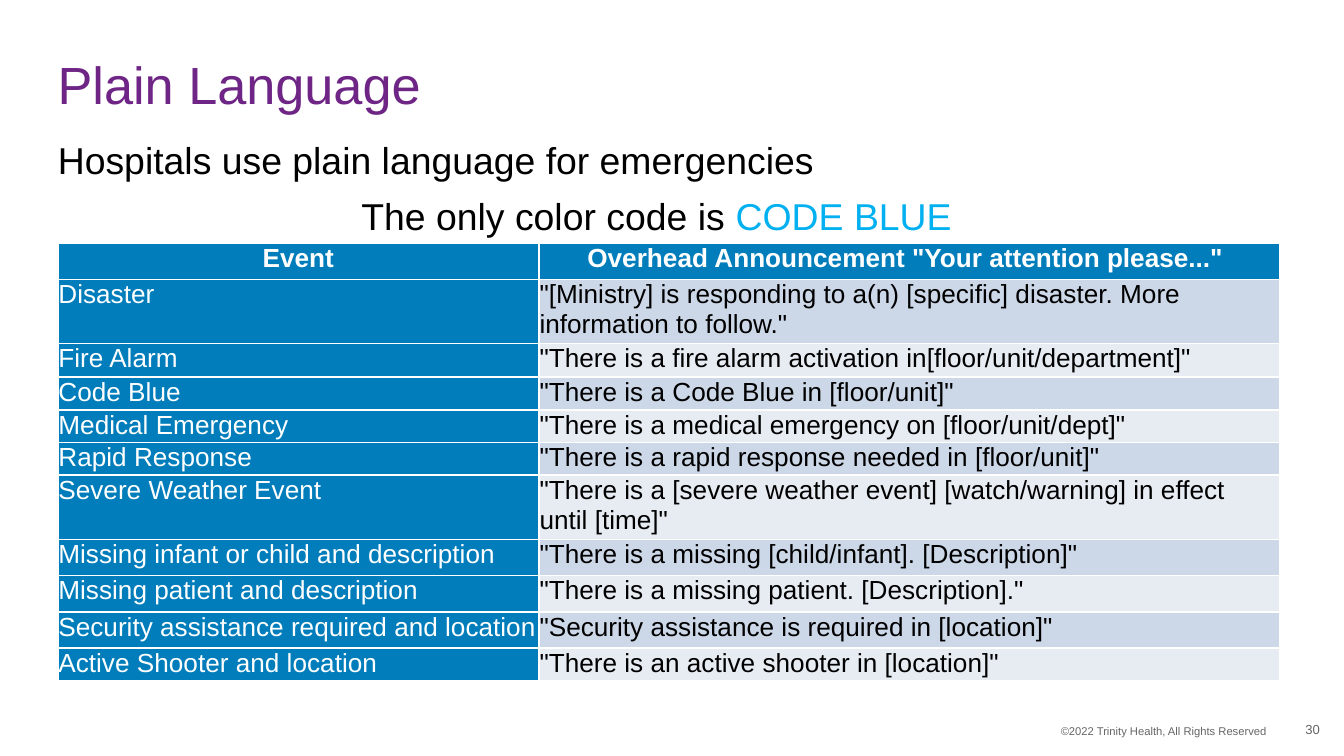
import pptx
import pptx.dml.color
import pptx.enum.text
import pptx.util
from dataclasses import dataclass
from pptx.util import Inches, Pt

ALIGN = pptx.enum.text.PP_ALIGN
ANCHOR = pptx.enum.text.MSO_ANCHOR
COLORS = {
    "purple": "6E2585", "black": "000000", "cyan": "00B0F0", "gray": "666666",
    "white": "FFFFFF", "blue": "007DBA", "dark": "CCD7E7", "light": "E7ECF3",
}


@dataclass
class Label:
    text: str
    place: tuple[float, float, float, float]
    size: int
    color: str
    align: ALIGN = ALIGN.LEFT
    anchor: ANCHOR = ANCHOR.TOP
    insets: tuple[float, float, float, float] = (0.1, 0.05, 0.1, 0.05)
    spacing: float = 1.0


@dataclass
class Event:
    name: str
    call: str
    height: float = 0.24


TITLE = Label("Plain Language", (0.43, 0.38, 9, 0.55), 28, "purple",
              anchor=ANCHOR.MIDDLE, insets=(0, 0, 0, 0), spacing=0.9)
INTRO = Label("Hospitals use plain language for emergencies",
              (0.43, 0.92, 9.01, 4.11), 20, "black", insets=(0, 0.1, 0.1, 0.05))
RIGHTS = Label("©2022 Trinity Health, All Rights Reserved",
               (5.33, 5.34, 4.19, 0.2), 6, "gray", ALIGN.RIGHT)
NUMBER = Label("30", (9.38, 5.28, 0.44, 0.3), 7, "gray", ALIGN.RIGHT,
               ANCHOR.MIDDLE, (0.1, 0.05, 0, 0.05))

EVENTS = [
    Event("Event", 'Overhead Announcement "Your attention please..." ', 0.27),
    Event("Disaster", '"[Ministry] is responding to a(n) [specific] disaster. '
          'More information to follow."', 0.43),
    Event("Fire Alarm",
          '"There is a fire alarm activation in[floor/unit/department]"', 0.25),
    Event("Code Blue", '"There is a Code Blue in [floor/unit]"'),
    Event("Medical Emergency",
          '"There is a medical emergency on [floor/unit/dept]"'),
    Event("Rapid Response",
          '"There is a rapid response needed in [floor/unit]"'),
    Event("Severe Weather Event", '"There is a [severe weather event] '
          '[watch/warning] in effect until [time]"', 0.43),
    Event("Missing infant or child and description",
          '"There is a missing [child/infant]. [Description]"', 0.27),
    Event("Missing patient and description",
          '"There is a missing patient. [Description]."', 0.27),
    Event("Security assistance required and location",
          '"Security assistance is required in [location]"', 0.27),
    Event("Active Shooter and location",
          '"There is an active shooter in [location]"'),
]


def get_color(name: str) -> pptx.dml.color.RGBColor:
    return pptx.dml.color.RGBColor.from_string(COLORS[name])


def set_font(item, size: int, color: str, bold: bool = False) -> None:
    """Style a paragraph or a run."""
    item.font.name = "Arial"
    item.font.size = Pt(size)
    item.font.bold = bold
    item.font.color.rgb = get_color(color)


def add_label(slide, label: Label):
    box = slide.shapes.add_textbox(*map(Inches, label.place))
    frame = box.text_frame
    frame.word_wrap = True
    frame.vertical_anchor = label.anchor
    (frame.margin_left, frame.margin_top,
     frame.margin_right, frame.margin_bottom) = map(Inches, label.insets)
    line = frame.paragraphs[0]
    line.text = label.text
    line.alignment = label.align
    line.line_spacing = label.spacing
    set_font(line, label.size, label.color)
    return frame


def add_intro(slide) -> None:
    frame = add_label(slide, INTRO)
    line = frame.add_paragraph()
    line.alignment = ALIGN.CENTER
    line.add_run().text = "The only color code is "
    code = line.add_run()
    code.text = "CODE BLUE"
    set_font(line, INTRO.size, INTRO.color)
    code.font.color.rgb = get_color("cyan")
    for part in frame.paragraphs:
        part.space_after = Pt(6)


def fill_cell(cell, text: str, row: int, col: int) -> None:
    head = row == 0
    inset = Inches(0.01) // 2
    cell.margin_left = cell.margin_right = inset
    cell.margin_top = cell.margin_bottom = inset
    band = "dark" if row % 2 else "light"
    cell.fill.solid()
    cell.fill.fore_color.rgb = get_color("blue" if head or col == 0 else band)
    line = cell.text_frame.paragraphs[0]
    line.text = text
    line.alignment = ALIGN.CENTER if head else ALIGN.LEFT
    set_font(line, 14, "white" if head or col == 0 else "black", head)


def add_events(slide) -> None:
    """Add the table; its default style draws the white grid lines."""
    widths = (3.58, 5.51)
    total = sum(event.height for event in EVENTS)
    table = slide.shapes.add_table(
        len(EVENTS), len(widths), Inches(0.43), Inches(1.81),
        Inches(sum(widths)), Inches(total)).table
    for column, width in zip(table.columns, widths):
        column.width = Inches(width)
    for row, event in enumerate(EVENTS):
        table.rows[row].height = Inches(event.height)
        for col, text in enumerate((event.name, event.call)):
            fill_cell(table.cell(row, col), text, row, col)


def main() -> None:
    deck = pptx.Presentation()
    deck.slide_width = Inches(10)
    deck.slide_height = deck.slide_width * 9 // 16
    slide = deck.slides.add_slide(deck.slide_layouts[6])
    add_intro(slide)
    for label in (TITLE, RIGHTS, NUMBER):
        add_label(slide, label)
    add_events(slide)
    deck.save("out.pptx")


if __name__ == "__main__":
    main()
